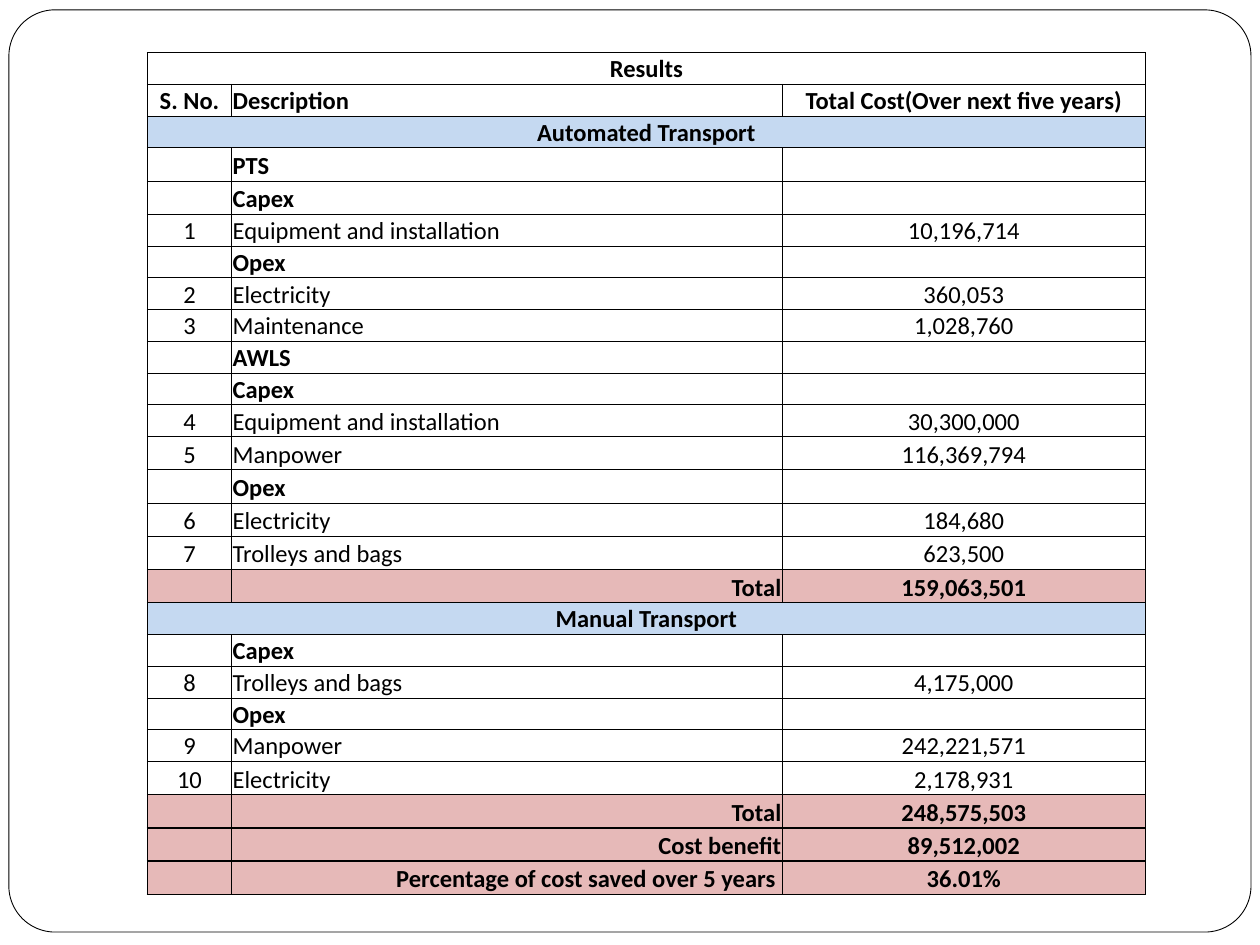
from dataclasses import dataclass

from lxml.etree import SubElement as Sub
from pptx import Presentation
from pptx.dml.color import RGBColor as Rgb
from pptx.enum.shapes import MSO_SHAPE as Shape
from pptx.enum.text import MSO_ANCHOR as Anchor, PP_ALIGN as Align
from pptx.oxml.ns import qn
from pptx.util import Cm, Pt


@dataclass(frozen=True)
class Theme:
    """Colours, type and line weights of the slide."""
    font: str = "Calibri"
    size: int = 14
    ink: str = "000000"
    paper: str = "FFFFFF"
    band: str = "C5D9F1"
    total: str = "E6B9B8"
    thin: float = 0.5
    thick: float = 1


LOOK = Theme()
COLS = (1.7, 11.1, 7.32)
LOW, TALL = 0.64, 0.67
TALLS = {3, 4, *range(12, 17), *range(22, 26)}
ROWS = (
    ("title", "Results", "", ""),
    ("head", "S. No.", "Description", "Total Cost(Over next five years)"),
    ("band", "Automated Transport", "", ""),
    ("head", "", "PTS", ""),
    ("head", "", "Capex", ""),
    ("item", "1", "Equipment and installation", "10,196,714"),
    ("head", "", "Opex", ""),
    ("item", "2", "Electricity", "360,053"),
    ("item", "3", "Maintenance", "1,028,760"),
    ("head", "", "AWLS", ""),
    ("head", "", "Capex", ""),
    ("item", "4", "Equipment and installation", "30,300,000"),
    ("item", "5", "Manpower", "116,369,794"),
    ("head", "", "Opex", ""),
    ("item", "6", "Electricity", "184,680"),
    ("item", "7", "Trolleys and bags", "623,500"),
    ("total", "", "Total", "159,063,501"),
    ("band", "Manual Transport", "", ""),
    ("head", "", "Capex", ""),
    ("item", "8", "Trolleys and bags", "4,175,000"),
    ("head", "", "Opex", ""),
    ("item", "9", "Manpower", "242,221,571"),
    ("item", "10", "Electricity", "2,178,931"),
    ("total", "", "Total", "248,575,503"),
    ("total", "", "Cost benefit", "89,512,002"),
    ("total", "", "Percentage of cost saved over 5 years ", "36.01%"),
)


def add_frame(slide, left, top, width, height):
    """Draw the rounded page frame in the given box."""
    frame = slide.shapes.add_shape(
        Shape.ROUNDED_RECTANGLE, Cm(left), Cm(top), Cm(width), Cm(height))
    frame.adjustments[0] = 0.05
    frame.shadow.inherit = False
    frame.fill.solid()
    frame.fill.fore_color.rgb = Rgb.from_string(LOOK.paper)
    frame.line.color.rgb = Rgb.from_string(LOOK.ink)
    frame.line.width = Pt(LOOK.thin)


def set_edge(cell, side, weight):
    """Rule one side of a cell."""
    props = cell._tc.get_or_add_tcPr()
    line = Sub(props, qn(f"a:ln{side}"), w=str(Pt(weight)))
    fill = Sub(line, qn("a:solidFill"))
    Sub(fill, qn("a:srgbClr"), val=LOOK.ink)


def set_text(cell, text, align, bold):
    """Write and format the text of a cell."""
    cell.margin_left = cell.margin_right = cell.margin_top = Cm(0.02)
    cell.margin_bottom = 0
    cell.vertical_anchor = Anchor.BOTTOM
    para = cell.text_frame.paragraphs[0]
    para.text = text
    para.alignment = align
    for run in para.runs:
        run.font.name = LOOK.font
        run.font.size = Pt(LOOK.size)
        run.font.bold = bold
        run.font.color.rgb = Rgb.from_string(LOOK.ink)
    if not text:
        Sub(para._p, qn("a:endParaRPr"), sz=str(LOOK.size * 100))


def set_fill(cell, kind):
    """Fill a cell by the kind of its row."""
    tint = {"band": LOOK.band, "total": LOOK.total}.get(kind)
    if tint:
        cell.fill.solid()
        cell.fill.fore_color.rgb = Rgb.from_string(tint)
    else:
        cell.fill.background()


def get_weight(*kinds):
    """Give the rule weight between rows of these kinds."""
    return LOOK.thick if "total" in kinds else LOOK.thin


def add_costs(slide, left, top):
    """Build the cost table from its top left corner."""
    tall = [TALL if row in TALLS else LOW for row in range(len(ROWS))]
    table = slide.shapes.add_table(
        len(ROWS), len(COLS), Cm(left), Cm(top),
        Cm(sum(COLS)), Cm(sum(tall))).table
    table.first_row = table.horz_banding = False
    for col, width in zip(table.columns, COLS):
        col.width = Cm(width)
    kinds = [row[0] for row in ROWS]
    for num, (kind, *texts) in enumerate(ROWS):
        table.rows[num].height = Cm(tall[num])
        over = kinds[num - 1] if num else kind
        under = kinds[num + 1] if num + 1 < len(kinds) else kind
        edges = {"L": get_weight(kind), "R": get_weight(kind),
                 "T": get_weight(kind, over), "B": get_weight(kind, under)}
        middle = Align.RIGHT if kind == "total" else Align.LEFT
        aligns = (Align.CENTER, middle, Align.CENTER)
        for col, (text, align) in enumerate(zip(texts, aligns)):
            cell = table.cell(num, col)
            set_text(cell, text, align, kind != "item")
            for side, weight in edges.items():
                set_edge(cell, side, weight)
            set_fill(cell, kind)
        if kind in ("title", "band"):
            table.cell(num, 0).merge(table.cell(num, len(COLS) - 1))


def main():
    """Build and save the slide."""
    deck = Presentation()
    deck.slide_width, deck.slide_height = Cm(25.4), Cm(19.05)
    slide = deck.slides.add_slide(deck.slide_layouts[6])
    add_frame(slide, 0.18, 0.2, 25.04, 18.59)
    add_costs(slide, 2.97, 1.06)
    deck.save("out.pptx")


if __name__ == "__main__":
    main()
